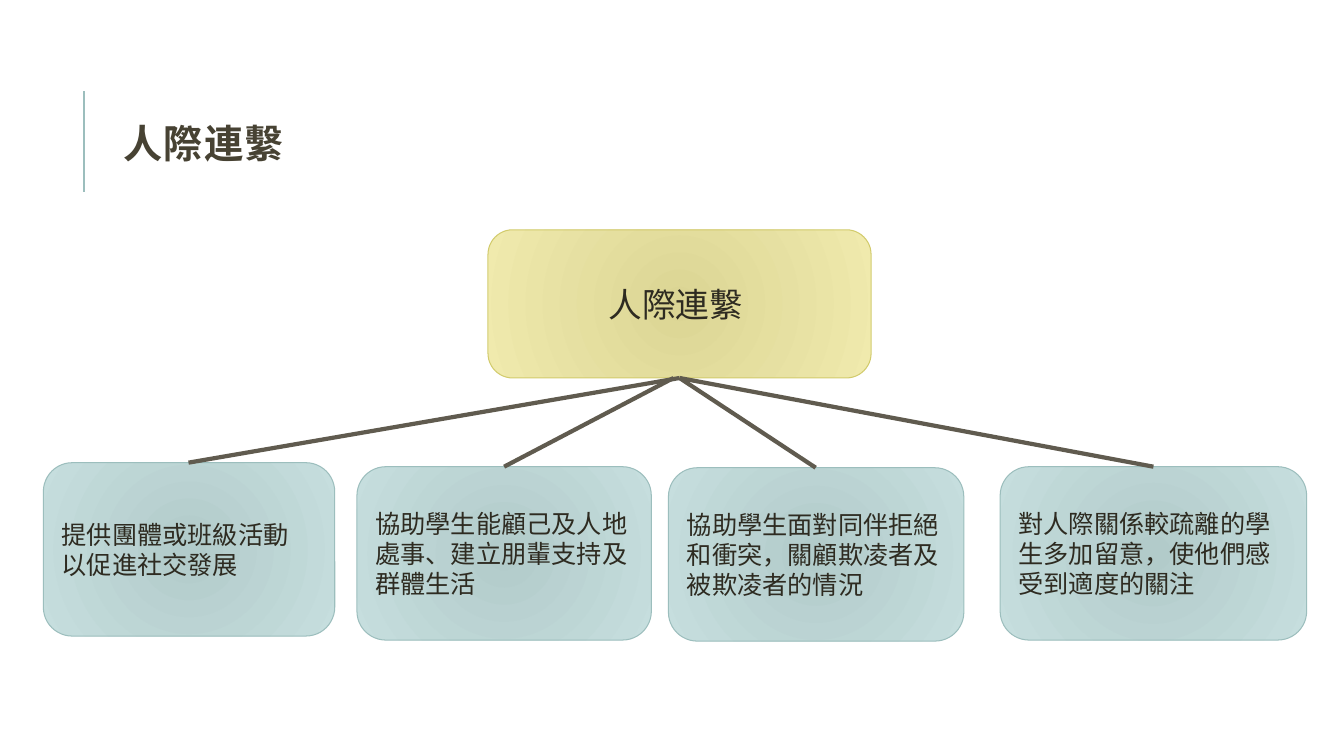
from dataclasses import dataclass

from lxml import etree
from pptx import Presentation
from pptx import util as u
from pptx.dml.color import RGBColor
from pptx.enum import shapes, text
from pptx.oxml.ns import qn

PX = 9144


@dataclass(frozen=True)
class Theme:
    title_font: str = "Calibri"
    body_font: str = "Arial"
    title_size: int = 28
    root_size: int = 24
    branch_size: int = 18
    title_color: str = "474233"
    text_color: str = "2E2B21"
    link_color: str = "605B4F"
    accent: str = "9CBEBD"
    root_colors: tuple = ("DBD594", "F0EAAD", "D2CB6C")
    branch_colors: tuple = ("B2CBCA", "C6DEDE", "9CBEBD")


THEME = Theme()
ROOT_BOX = (484, 228, 380, 147)
BRANCHES = [
    ((43, 459, 289, 172), "提供團體或班級活動\v以促進社交發展"),
    ((354, 463, 292, 172), "協助學生能顧己及人地處事、建立朋輩支持及群體生活"),
    ((663, 464, 293, 172), "協助學生面對同伴拒絕和衝突，關顧欺凌者及被欺凌者的情況"),
    ((992, 463, 304, 172), "對人際關係較疏離的學生多加留意，使他們感受到適度的關注"),
]
LINK_SHIFTS = (0, -6, 0, 0)


def px(*lengths):
    return [u.Emu(length * PX) for length in lengths]


def style_run(run, font, size, color, bold=False):
    run.font.name = font
    run.font.size = u.Pt(size)
    run.font.bold = bold
    run.font.color.rgb = RGBColor.from_string(color)


def add_line(slide, start, end, color, width):
    line = slide.shapes.add_connector(shapes.MSO_CONNECTOR.STRAIGHT, *px(*start, *end))
    line.line.color.rgb = RGBColor.from_string(color)
    line.line.width = u.Pt(width)
    etree.SubElement(line._element.spPr, qn("a:effectLst"))


def fill_radially(shape, colors):
    shape.fill.gradient()
    for stop, color in zip(shape.fill.gradient_stops, colors):
        stop.color.rgb = RGBColor.from_string(color)
    gradient = shape._element.spPr.find(qn("a:gradFill"))
    circle = etree.Element(qn("a:path"), path="circle")
    etree.SubElement(circle, qn("a:fillToRect"), {side: "100000" for side in "ltrb"})
    gradient.replace(gradient.find(qn("a:lin")), circle)


def add_card(slide, box, wording, colors, size, alignment):
    card = slide.shapes.add_shape(shapes.MSO_SHAPE.ROUNDED_RECTANGLE, *px(*box))
    card.shadow.inherit = False
    fill_radially(card, colors[:2])
    card.line.color.rgb = RGBColor.from_string(colors[2])
    card.line.width = u.Pt(0.75)
    card.text_frame.word_wrap = True
    card.text_frame.vertical_anchor = text.MSO_ANCHOR.MIDDLE
    paragraph = card.text_frame.paragraphs[0]
    paragraph.text = wording
    paragraph.alignment = alignment
    for run in paragraph.runs:
        style_run(run, THEME.body_font, size, THEME.text_color)


def add_heading(slide, box, wording):
    left, top, width, height = box
    rule_x = left - 29
    add_line(slide, (rule_x, top + 126), (rule_x, top + 26), THEME.accent, 1.5)
    title = slide.shapes.title
    title.left, title.top, title.width, title.height = px(left, top, width, height)
    title.text_frame.text = wording
    title.text_frame.vertical_anchor = text.MSO_ANCHOR.MIDDLE
    paragraph = title.text_frame.paragraphs[0]
    paragraph.alignment = text.PP_ALIGN.LEFT
    paragraph.line_spacing = 0.8
    run = paragraph.runs[0]
    style_run(run, THEME.title_font, THEME.title_size, THEME.title_color, bold=True)
    run.font._element.set("spc", "100")


def add_tree(slide, root_box, root_text, branches):
    left, top, width, height = root_box
    add_card(slide, root_box, root_text, THEME.root_colors, THEME.root_size,
             text.PP_ALIGN.CENTER)
    for box, wording in branches:
        add_card(slide, box, wording, THEME.branch_colors, THEME.branch_size,
                 text.PP_ALIGN.LEFT)
    for (box, _), shift in zip(branches, LINK_SHIFTS):
        start = (left + width // 2 + shift, top + height)
        end = (box[0] + box[2] // 2, box[1])
        add_line(slide, start, end, THEME.link_color, 3)


def main():
    presentation = Presentation()
    presentation.slide_width, presentation.slide_height = px(1333, 750)
    slide = presentation.slides.add_slide(presentation.slide_layouts[5])
    add_heading(slide, (112, 64, 1063, 164), "人際連繫")
    add_tree(slide, ROOT_BOX, "人際連繫 ", BRANCHES)
    presentation.save("out.pptx")


if __name__ == "__main__":
    main()
